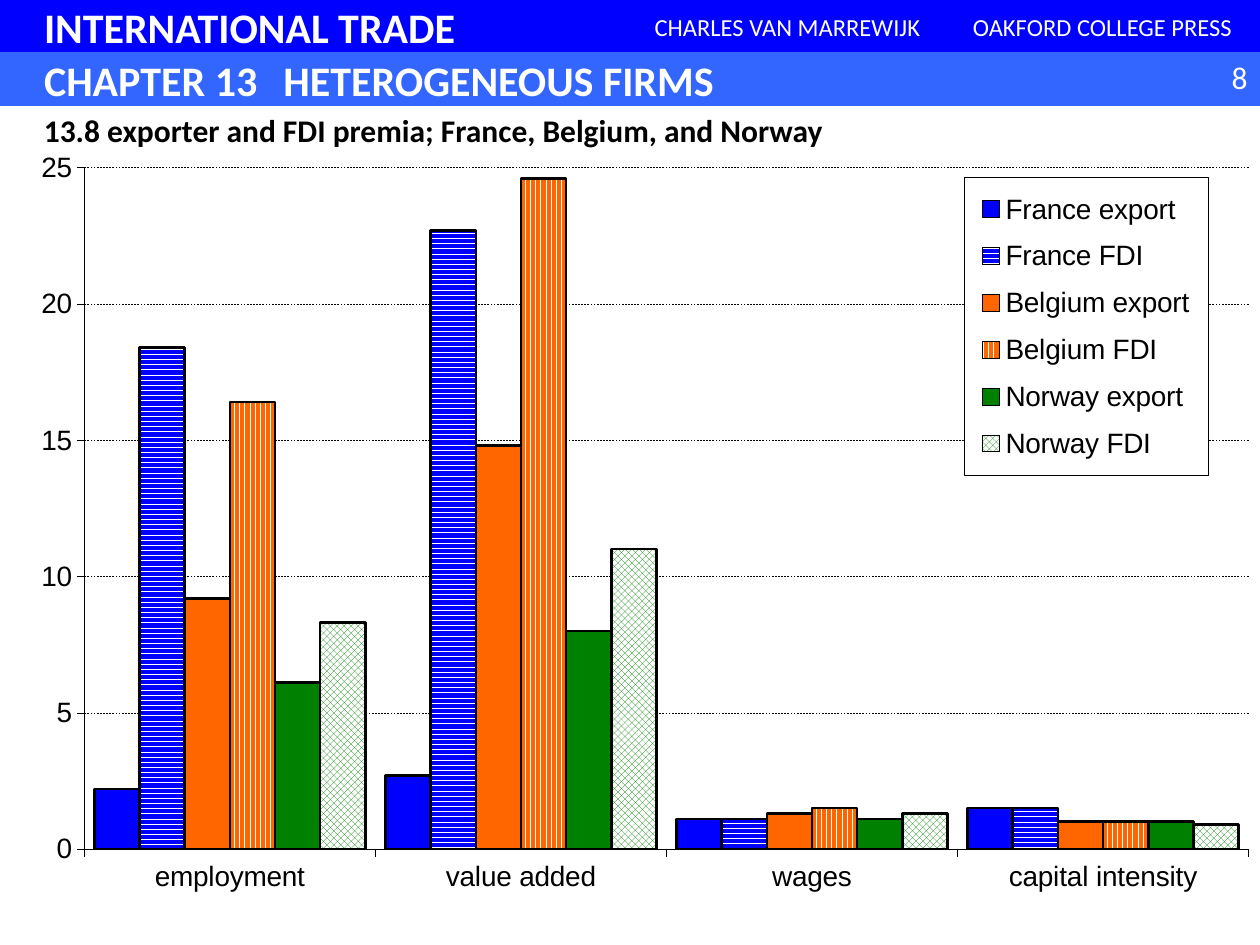
from dataclasses import dataclass

from lxml import etree
from pptx import Presentation
from pptx.chart.data import CategoryChartData
from pptx.dml.color import RGBColor
from pptx.enum.chart import XL_CHART_TYPE, XL_LEGEND_POSITION, XL_TICK_MARK
from pptx.enum.dml import MSO_LINE, MSO_PATTERN
from pptx.enum.shapes import MSO_SHAPE
from pptx.enum.text import MSO_ANCHOR, PP_ALIGN
from pptx.oxml import parse_xml
from pptx.oxml.ns import nsdecls, qn
from pptx.util import Inches, Pt

COLUMN = XL_CHART_TYPE.COLUMN_CLUSTERED
LEGEND_RIGHT = XL_LEGEND_POSITION.RIGHT
TICK_OUT = XL_TICK_MARK.OUTSIDE
DASH = MSO_LINE.DASH
HORZ, VERT = MSO_PATTERN.DARK_HORIZONTAL, MSO_PATTERN.DARK_VERTICAL
CHECK = MSO_PATTERN.LARGE_CHECKER_BOARD
RECT = MSO_SHAPE.RECTANGLE
MIDDLE, TOP = MSO_ANCHOR.MIDDLE, MSO_ANCHOR.TOP
LEFT, CENTER, RIGHT = PP_ALIGN.LEFT, PP_ALIGN.CENTER, PP_ALIGN.RIGHT


@dataclass(frozen=True)
class Theme:
    blue: RGBColor = RGBColor(0, 0, 255)
    light_blue: RGBColor = RGBColor(0x33, 0x66, 255)
    orange: RGBColor = RGBColor(255, 0x66, 0)
    green: RGBColor = RGBColor(0, 0x80, 0)
    white: RGBColor = RGBColor(255, 255, 255)
    black: RGBColor = RGBColor(0, 0, 0)
    text_font: str = "Calibri"
    chart_font: str = "Arial"
    heading: int = 24
    caption: int = 18
    credit: int = 14
    chart: int = 16


CATEGORIES = ["employment", "value added", "wages", "capital intensity"]
T = Theme()
SERIES = [
    ("France export", [2.2, 2.7, 1.1, 1.5], T.blue, None),
    ("France FDI", [18.4, 22.7, 1.1, 1.5], T.blue, HORZ),
    ("Belgium export", [9.2, 14.8, 1.3, 1], T.orange, None),
    ("Belgium FDI", [16.4, 24.6, 1.5, 1], T.orange, VERT),
    ("Norway export", [6.1, 8, 1.1, 1], T.green, None),
    ("Norway FDI", [8.3, 11, 1.3, 0.9], T.green, CHECK),
]


class Deck:
    """Holds the theme and the current slide, and draws each kind of element."""

    def __init__(self, theme, s):
        self.theme, self.s = theme, s

    def add_text(self, tf, text, size, color, bold=False, align=LEFT, anchor=TOP, inset=0.1):
        tf.word_wrap = True
        tf.vertical_anchor = anchor
        tf.margin_left = Inches(inset)
        p = tf.paragraphs[0]
        p.alignment = align
        r = p.add_run()
        r.text = text
        r.font.name, r.font.size, r.font.bold = self.theme.text_font, Pt(size), bold
        r.font.color.rgb = color
        return p

    def band(self, box, text, fill, size, **style):
        sp = self.s.shapes.add_shape(RECT, *map(Inches, box))
        sp.shadow.inherit = False
        sp.fill.solid()
        sp.fill.fore_color.rgb = fill
        sp.line.color.rgb = fill
        sp.line.width = Pt(0.75)
        return self.add_text(sp.text_frame, text, size, self.theme.white, anchor=MIDDLE, **style)

    def label(self, box, text, color, **style):
        sp = self.s.shapes.add_textbox(*map(Inches, box))
        self.add_text(sp.text_frame, text, self.theme.caption, color, **style)

    def tab_stop(self, p, position):
        tabs = etree.SubElement(p._p.get_or_add_pPr(), qn("a:tabLst"))
        etree.SubElement(tabs, qn("a:tab"), pos=str(Inches(position)), algn="l")

    def font(self, font):
        font.name, font.size = self.theme.chart_font, Pt(self.theme.chart)
        font.color.rgb = self.theme.black

    def line(self, line, width):
        line.color.rgb = self.theme.black
        line.width = Pt(width)

    def layout(self, box, inner=False):
        target = '<c:layoutTarget val="inner"/>' if inner else ""
        modes = "".join(f'<c:{k}Mode val="edge"/>' for k in "xy")
        sizes = "".join(f'<c:{k} val="{v}"/>' for k, v in zip("xywh", box))
        return parse_xml(f'<c:layout {nsdecls("c")}><c:manualLayout>{target}{modes}{sizes}'
                         "</c:manualLayout></c:layout>")

    def column_chart(self, box, categories, series, plot_box, legend_box):
        data = CategoryChartData()
        data.categories = categories
        for name, values, _, _ in series:
            data.add_series(name, values)
        chart = self.s.shapes.add_chart(COLUMN, *map(Inches, box), data).chart
        chart.has_title = False
        self.font(chart.font)
        for axis in (chart.category_axis, chart.value_axis):
            axis.major_tick_mark = TICK_OUT
            self.font(axis.tick_labels.font)
            self.line(axis.format.line, 0.25)
        axis = chart.value_axis
        axis.minimum_scale, axis.maximum_scale, axis.major_unit = 0, 25, 5
        grid = axis.major_gridlines.format.line
        self.line(grid, 0.25)
        grid.dash_style = DASH
        plot = chart.plots[0]
        plot.gap_width, plot.overlap, plot.vary_by_categories = 45, 0, False
        for ser, (_, _, color, pattern) in zip(plot.series, series):
            fill = ser.format.fill
            if pattern is None:
                fill.solid()
            else:
                fill.patterned()
                fill.pattern = pattern
                fill.back_color.rgb = self.theme.white
            fill.fore_color.rgb = color
            self.line(ser.format.line, 1.5)
        area = chart._chartSpace.chart.plotArea
        for old in area.findall(qn("c:layout")):
            area.remove(old)
        area.insert(0, self.layout(plot_box, inner=True))
        self.legend(chart, legend_box)

    def legend(self, chart, box):
        chart.has_legend = True
        legend = chart.legend
        legend.position = LEGEND_RIGHT
        legend.include_in_layout = False
        self.font(legend.font)
        root = legend._element
        for old in root.findall(qn("c:layout")):
            root.remove(old)
        root.find(qn("c:legendPos")).addnext(self.layout(box))
        root.find(qn("c:txPr")).addprevious(parse_xml(
            f'<c:spPr {nsdecls("c", "a")}><a:solidFill><a:srgbClr val="{self.theme.white}"/>'
            f'</a:solidFill><a:ln w="{Pt(0.25)}"><a:solidFill>'
            f'<a:srgbClr val="{self.theme.black}"/></a:solidFill></a:ln></c:spPr>'))


def main():
    prs = Presentation()
    prs.slide_width, prs.slide_height = Inches(10), Inches(7.5)
    deck = Deck(T, prs.slides.add_slide(prs.slide_layouts[6]))
    heading = {"size": T.heading, "bold": True, "inset": 0.35}
    deck.band((0, 0, 10, 0.42), "INTERNATIONAL TRADE", T.blue, **heading)
    for i, credit in enumerate(["CHARLES VAN MARREWIJK", "OAKFORD COLLEGE PRESS"]):
        deck.band((5 + 2.5 * i, 0, 2.5, 0.42), credit, T.blue, T.credit, align=CENTER)
    p = deck.band((0, 0.42, 10, 0.42), "CHAPTER 13\tHETEROGENEOUS FIRMS", T.light_blue, **heading)
    deck.tab_stop(p, 1.9)
    deck.label((9.33, 0.41, 0.67, 0.4), "8", T.white, align=RIGHT)
    deck.column_chart((0, 0.83, 10, 6.67), CATEGORIES, SERIES,
                      plot_box=(0.067, 0.075, 0.924, 0.811),
                      legend_box=(0.765, 0.087, 0.194, 0.354))
    deck.label((0.25, 0.83, 6.5, 0.4),
               "13.8 exporter and FDI premia; France, Belgium, and Norway", T.black, bold=True)
    prs.save("out.pptx")


if __name__ == "__main__":
    main()
